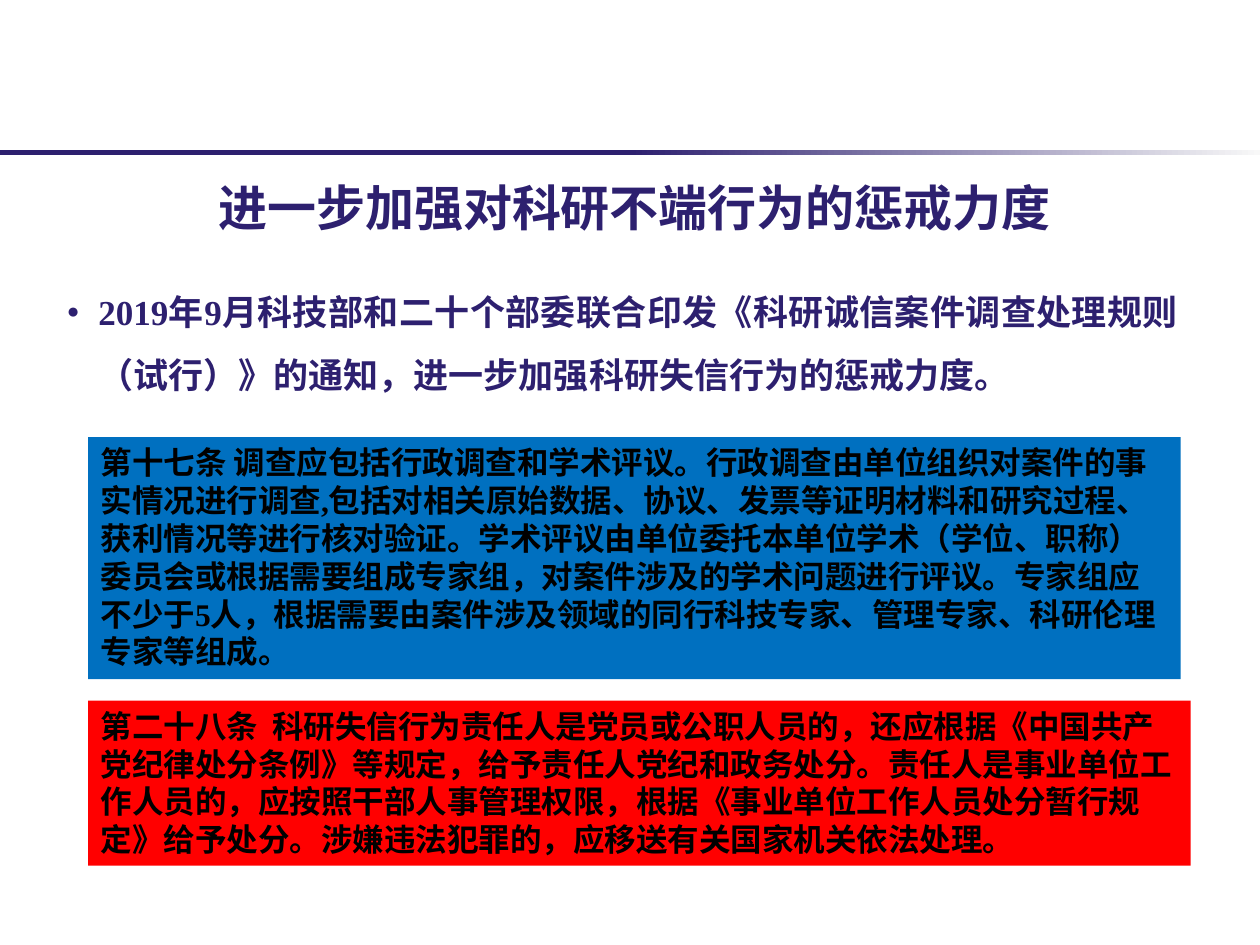
import pptx
import pptx.util
import pptx.dml.color
import pptx.enum.shapes
import pptx.enum.text
import pptx.oxml
import pptx.oxml.ns

Inches, Pt = pptx.util.Inches, pptx.util.Pt
RGBColor = pptx.dml.color.RGBColor
ALIGN = pptx.enum.text.PP_ALIGN
ANCHOR = pptx.enum.text.MSO_ANCHOR
AUTO_SIZE = pptx.enum.text.MSO_AUTO_SIZE
RECTANGLE = pptx.enum.shapes.MSO_SHAPE.RECTANGLE

# Content
TITLE = "进一步加强对科研不端行为的惩戒力度"
NOTICE = "2019年9月科技部和二十个部委联合印发《科研诚信案件调查处理规则（试行）》的通知，进一步加强科研失信行为的惩戒力度。"
ARTICLE_17 = (
    "第十七条 调查应包括行政调查和学术评议。行政调查由单位组织对案件的事实情况进行调查,"
    "包括对相关原始数据、协议、发票等证明材料和研究过程、获利情况等进行核对验证。"
    "学术评议由单位委托本单位学术（学位、职称）委员会或根据需要组成专家组，"
    "对案件涉及的学术问题进行评议。专家组应不少于5人，"
    "根据需要由案件涉及领域的同行科技专家、管理专家、科研伦理专家等组成。")
ARTICLE_28 = (
    "第二十八条  科研失信行为责任人是党员或公职人员的，还应根据《中国共产党纪律处分条例》等规定，"
    "给予责任人党纪和政务处分。责任人是事业单位工作人员的，应按照干部人事管理权限，"
    "根据《事业单位工作人员处分暂行规定》给予处分。涉嫌违法犯罪的，应移送有关国家机关依法处理。")

# Style
NAVY = RGBColor(0x2D, 0x20, 0x6F)
PALE = RGBColor(0xF8, 0xF8, 0xF8)
BLUE = RGBColor(0x00, 0x70, 0xC0)
RED = RGBColor(0xFF, 0x00, 0x00)
BLACK = RGBColor(0x00, 0x00, 0x00)
SERIF, SANS = "Times New Roman", "Noto Sans CJK SC"

# Layout in inches
PLACEHOLDER_LEFT, ARTICLE_LEFT = 0.43, 0.7
ARTICLES = [  # text, fill, top, width, height
    (ARTICLE_17, BLUE, 3.47, 8.67, 1.92),
    (ARTICLE_28, RED, 5.56, 8.75, 1.31),
]


def place(shape, left, top, width, height):
    shape.left, shape.top = Inches(left), Inches(top)
    shape.width, shape.height = Inches(width), Inches(height)


def add_bullet(paragraph, char, color, percent, indent):
    props = paragraph._p.get_or_add_pPr()
    props.set("marL", str(Inches(indent)))
    props.set("indent", str(-Inches(indent)))
    ns = pptx.oxml.ns.nsdecls("a")
    for xml in (f'<a:buClr {ns}><a:srgbClr val="{color}"/></a:buClr>',
                f'<a:buSzPct {ns} val="{percent * 1000}"/>',
                f'<a:buFont {ns} typeface="{SERIF}"/>',
                f'<a:buChar {ns} char="{char}"/>'):
        props.append(pptx.oxml.parse_xml(xml))


def write(shape, text, size, color, font=SERIF, align=ALIGN.LEFT, anchor=ANCHOR.TOP,
          line=1.0, after=0, bullet=None, fit=AUTO_SIZE.NONE, insets=(0.1, 0.05)):
    frame = shape.text_frame
    frame.word_wrap, frame.auto_size, frame.vertical_anchor = True, fit, anchor
    frame.margin_left = frame.margin_right = Inches(insets[0])
    frame.margin_top = frame.margin_bottom = Inches(insets[1])
    paragraph = frame.paragraphs[0]
    paragraph.alignment, paragraph.line_spacing = align, line
    paragraph.space_before, paragraph.space_after = Pt(0), Pt(after)
    if bullet:
        add_bullet(paragraph, **bullet)
    run = paragraph.add_run()
    run.text = text
    run.font.size, run.font.bold, run.font.name = Pt(size), True, font
    run.font.color.rgb = color
    east_asian = pptx.oxml.parse_xml(
        f'<a:ea {pptx.oxml.ns.nsdecls("a")} typeface="{SANS}"/>')
    run._r.rPr.find(pptx.oxml.ns.qn("a:latin")).addnext(east_asian)


def add_box(slide, left, top, width, height):
    box = slide.shapes.add_shape(RECTANGLE, 0, 0, 0, 0)
    place(box, left, top, width, height)
    box.shadow.inherit = False
    box.line.fill.background()
    return box


def main():
    deck = pptx.Presentation()
    deck.slide_width, deck.slide_height = Inches(10), Inches(7.5)
    slide = deck.slides.add_slide(deck.slide_layouts[1])

    # Fading rule under the header
    rule = add_box(slide, 0, 1.19, 10, 0.04)
    rule.fill.gradient()
    rule.fill.gradient_angle = 0
    for stop, position, color in zip(rule.fill.gradient_stops, (0.5, 1), (NAVY, PALE)):
        stop.position, stop.color.rgb = position, color

    # Title and notice
    title, notice = slide.placeholders
    place(title, PLACEHOLDER_LEFT, 1.35, 9.21, 0.53)
    write(title, TITLE, 28, NAVY, font=SANS, align=ALIGN.CENTER, anchor=ANCHOR.BOTTOM,
          line=1.1, after=1, insets=(0.06, 0))
    place(notice, PLACEHOLDER_LEFT, 2.09, 9.02, 1.19)
    write(notice, NOTICE, 20, NAVY, align=ALIGN.JUSTIFY, line=1.5, after=2,
          bullet=dict(char="●", color=NAVY, percent=60, indent=0.25))

    # Quoted articles
    for text, fill, top, width, height in ARTICLES:
        article = add_box(slide, ARTICLE_LEFT, top, width, height)
        article.fill.solid()
        article.fill.fore_color.rgb = fill
        write(article, text, 18, BLACK, fit=AUTO_SIZE.SHAPE_TO_FIT_TEXT)

    deck.save("out.pptx")


if __name__ == "__main__":
    main()
